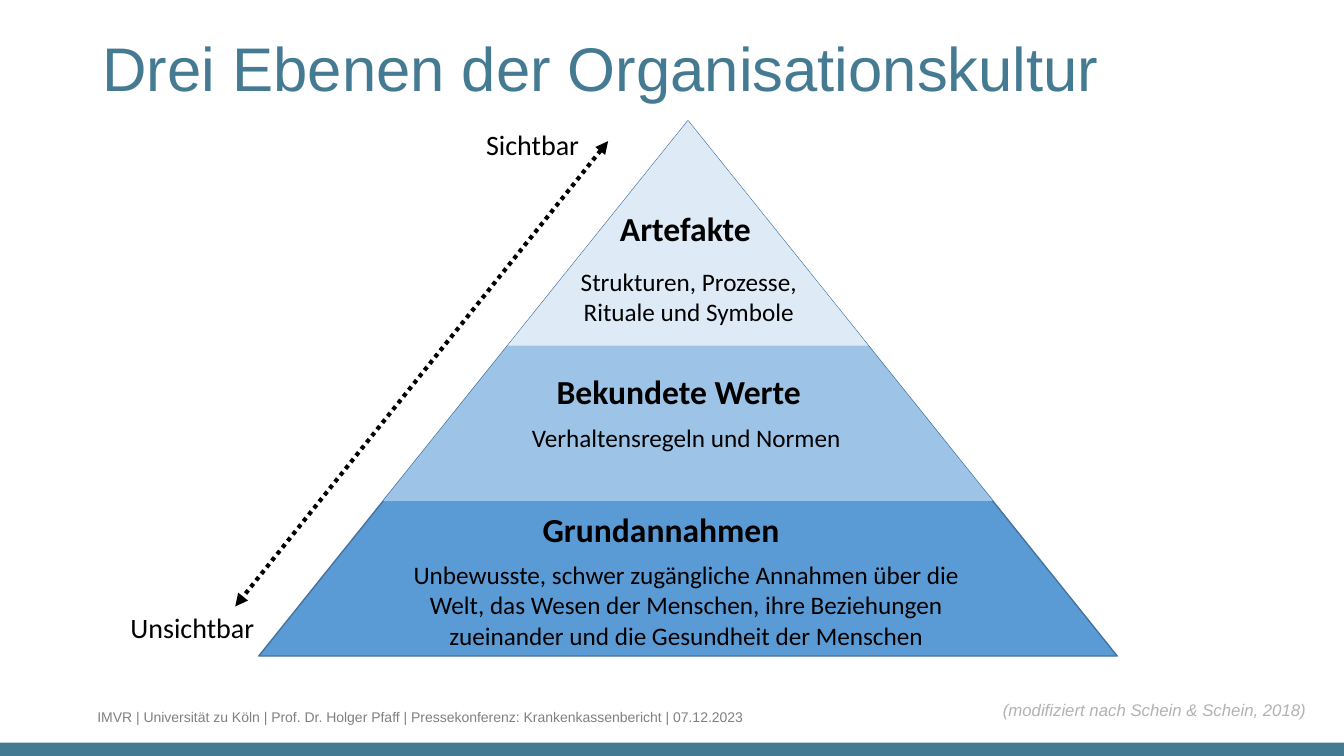
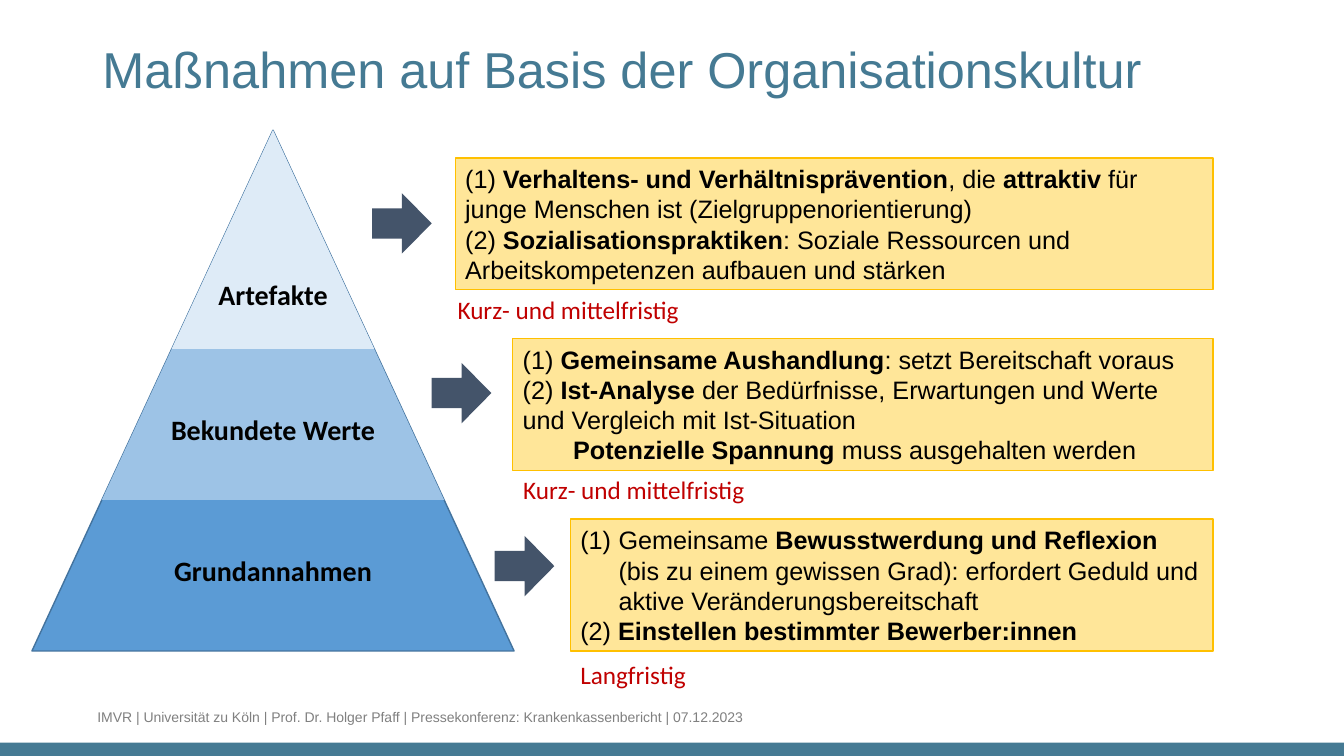
from lxml import etree
from pptx import Presentation
from pptx import util as u
from pptx.dml.color import RGBColor
from pptx.enum import dml, shapes, text
from pptx.oxml.ns import qn

COLUMNS, ROWS = 160, 90
SLIDE_WIDTH, SLIDE_HEIGHT = u.Inches(13.33), u.Inches(7.5)

PETROL = RGBColor(0x45, 0x7A, 0x93)
BLACK = RGBColor(0, 0, 0)
FOOTER_GREY = RGBColor(0x80, 0x80, 0x80)
SOURCE_GREY = RGBColor(0xB2, 0xB2, 0xB2)
LAYER_BLUES = (RGBColor(0x5B, 0x9B, 0xD5), RGBColor(0x9D, 0xC3, 0xE6),
               RGBColor(0xDE, 0xEB, 0xF7))
OUTLINE_BLUE = RGBColor(0x43, 0x73, 0x9E)
SAND = RGBColor(0xFF, 0xE6, 0x99)
AMBER = RGBColor(0xFF, 0xC0, 0x00)
SLATE = RGBColor(0x44, 0x54, 0x6A)
DARK_RED = RGBColor(0xC0, 0, 0)

LAYER_SHARES = (1, 0.71, 0.42)
LEVELS = ("Artefakte", "Bekundete Werte", "Grundannahmen")
FOOTER = ("IMVR | Universität zu Köln | Prof. Dr. Holger Pfaff | "
          "Pressekonferenz: Krankenkassenbericht | 07.12.2023")

# Level label and description: centre column, top row, width in columns
LEVEL_PLACES = ((81.6, 24.2, 36), (80.8, 43.6, 36), (78.7, 60, 36))
DESCRIPTIONS = (
    ("Strukturen, Prozesse, Rituale und Symbole", 82, 31.1, 30.1),
    ("Verhaltensregeln und Normen", 81.7, 49.7, 41.6),
    ("Unbewusste, schwer zugängliche Annahmen über die Welt, das Wesen der "
     "Menschen, ihre Beziehungen zueinander und die Gesundheit der Menschen",
     81.7, 66, 70.8),
)

# Paragraphs (** toggles bold), arrow place, time frame, time frame place
MEASURES = (
    (("(1) **Verhaltens- und Verhältnisprävention**, die **attraktiv** für\n"
      "junge Menschen ist (Zielgruppenorientierung)",
      "(2) **Sozialisationspraktiken**: Soziale Ressourcen und\n"
      "Arbeitskompetenzen aufbauen und stärken"),
     (44.3, 23), "Kurz- und mittelfristig", (53.3, 34.4)),
    (("(1) **Gemeinsame Aushandlung**: setzt Bereitschaft voraus",
      "(2) **Ist-Analyse** der Bedürfnisse, Erwartungen und Werte\n"
      "und Vergleich mit Ist-Situation",
      "**Potenzielle Spannung** muss ausgehalten werden"),
     (51.4, 43.2), "Kurz- und mittelfristig", (61.1, 55.9)),
    (("Gemeinsame **Bewusstwerdung und Reflexion** (bis zu einem gewissen "
      "Grad): erfordert Geduld und aktive Veränderungsbereitschaft",
      "(2) **Einstellen bestimmter Bewerber:innen**"),
     (58.9, 63.8), "Langfristig", (67.9, 77.9)),
)


def col(count):
    return u.Emu(round(SLIDE_WIDTH * count / COLUMNS))


def row(count):
    return u.Emu(round(SLIDE_HEIGHT * count / ROWS))


def area(left, top, width, height):
    return col(left), row(top), col(width), row(height)


def style_font(font, size, color, name="Arial", bold=False, italic=False):
    font.size, font.name = u.Pt(size), name
    font.bold, font.italic = bold, italic
    font.color.rgb = color


def add_text(slide, words, place, size, color=BLACK, align=text.PP_ALIGN.LEFT,
             **style):
    box = slide.shapes.add_textbox(*area(*place))
    frame = box.text_frame
    frame.word_wrap = True
    frame.text = words
    paragraph = frame.paragraphs[0]
    paragraph.alignment = align
    style_font(paragraph.runs[0].font, size, color, **style)
    return box


def add_centred(slide, words, centre, top, width, size, bold=False):
    add_text(slide, words, (centre - width / 2, top, width, 5), size,
             align=text.PP_ALIGN.CENTER, name="Calibri", bold=bold)


def add_filled(slide, preset, place, fill, line=None):
    shape = slide.shapes.add_shape(preset, *area(*place))
    shape.shadow.inherit = False
    shape.fill.solid()
    shape.fill.fore_color.rgb = fill
    if line is None:
        shape.line.fill.background()
    else:
        shape.line.color.rgb = line
        shape.line.width = u.Pt(1)
    return shape


def add_pyramid(slide, left, top, width, height):
    """Stack triangles that share one apex, largest at the back."""
    for share, blue in zip(LAYER_SHARES, LAYER_BLUES):
        place = (left + width * (1 - share) / 2, top, width * share, height * share)
        add_filled(slide, shapes.MSO_SHAPE.ISOSCELES_TRIANGLE, place, blue,
                   OUTLINE_BLUE if share == 1 else None)


def add_visibility_arrow(slide, start, end):
    arrow = slide.shapes.add_connector(
        shapes.MSO_CONNECTOR.STRAIGHT,
        col(start[0]), row(start[1]), col(end[0]), row(end[1]))
    arrow.line.color.rgb = BLACK
    arrow.line.width = u.Pt(3)
    arrow.line.dash_style = dml.MSO_LINE.ROUND_DOT
    outline = arrow.line._get_or_add_ln()
    for tip in ("a:headEnd", "a:tailEnd"):
        etree.SubElement(outline, qn(tip), type="triangle")
    etree.SubElement(arrow._element.spPr, qn("a:effectLst"))


def write_rich(paragraph, words):
    """Write text in which ** toggles bold and a newline breaks the line."""
    for part, chunk in enumerate(words.split("**")):
        for number, line in enumerate(chunk.split("\n")):
            if number:
                paragraph.add_line_break()
            if line:
                run = paragraph.add_run()
                run.text = line
                style_font(run.font, 18, BLACK, bold=part % 2 == 1)


def indent(paragraph, inches, numbered=False):
    properties = paragraph._p.get_or_add_pPr()
    properties.set("marL", str(u.Inches(inches)))
    if numbered:
        properties.set("indent", str(-u.Inches(inches)))
        etree.SubElement(properties, qn("a:buFont"), typeface="+mj-lt")
        etree.SubElement(properties, qn("a:buAutoNum"), type="arabicParenBoth")


def add_measure_box(slide, place, paragraphs):
    """Number an opening paragraph without "(1)"; indent a later one."""
    box = add_filled(slide, shapes.MSO_SHAPE.RECTANGLE, place, SAND, AMBER)
    frame = box.text_frame
    frame.word_wrap = True
    frame.vertical_anchor = text.MSO_ANCHOR.MIDDLE
    for number, words in enumerate(paragraphs):
        paragraph = frame.add_paragraph() if number else frame.paragraphs[0]
        paragraph.alignment = text.PP_ALIGN.LEFT
        write_rich(paragraph, words)
        if words.startswith("("):
            continue
        if number:
            indent(paragraph, 0.5)
        else:
            indent(paragraph, 0.38, numbered=True)


def add_titled_slide(deck, layout, heading, size, top):
    slide = deck.slides.add_slide(layout)
    title = slide.shapes.title
    title.left, title.top, title.width, title.height = area(11, top, 138, 17.4)
    frame = title.text_frame
    frame.text = heading
    frame.auto_size = text.MSO_AUTO_SIZE.NONE
    frame.vertical_anchor = text.MSO_ANCHOR.TOP
    paragraph = frame.paragraphs[0]
    paragraph.alignment = text.PP_ALIGN.LEFT
    paragraph.line_spacing = 0.9
    style_font(paragraph.runs[0].font, size, PETROL)
    return slide


def move_footer_to_layout(slide, layout):
    """Draw footer and band once and hand them to the shared layout."""
    for holder in list(layout.placeholders):
        if holder.placeholder_format.type != shapes.PP_PLACEHOLDER.TITLE:
            holder._element.getparent().remove(holder._element)
    footer = add_text(slide, FOOTER, (10.4, 83.8, 102.7, 3.2), 10, FOOTER_GREY)
    band = add_filled(slide, shapes.MSO_SHAPE.RECTANGLE,
                      (0, 88.4, COLUMNS, 1.6), PETROL)
    for part in (footer, band):
        layout.shapes._spTree.append(part._element)


def fill_levels_slide(slide):
    add_pyramid(slide, 30.8, 14.4, 102.2, 63.7)
    for level, place in zip(LEVELS, LEVEL_PLACES):
        add_centred(slide, level, *place, size=24, bold=True)
    for description in DESCRIPTIONS:
        add_centred(slide, *description, size=18)
    add_visibility_arrow(slide, (72.4, 16.8), (28, 72.2))
    add_centred(slide, "Sichtbar", 63.4, 14.6, 16.3, 20)
    add_centred(slide, "Unsichtbar", 22.9, 72.1, 17.5, 20)
    add_text(slide, "(modifiziert nach Schein & Schein, 2018)",
             (118.2, 82.7, 41.8, 4.7), 12, SOURCE_GREY, italic=True)


def fill_measures_slide(slide):
    add_pyramid(slide, 3.8, 15.5, 57.4, 62)
    for level, top in zip(LEVELS, (32.4, 48.5, 65.3)):
        add_centred(slide, level, 32.5, top, 29, 20, bold=True)
    right_edge = 144.4
    for step, (paragraphs, arrow, term, term_place) in enumerate(MEASURES):
        left, top = 54.2 + 6.85 * step, 18.8 + 21.5 * step
        add_measure_box(slide, (left, top, right_edge - left, 15.7), paragraphs)
        add_filled(slide, shapes.MSO_SHAPE.RIGHT_ARROW, (*arrow, 7.1, 7.2), SLATE)
        add_text(slide, term, (*term_place, 29.3, 4.8), 18, DARK_RED,
                 name="Calibri")


def main():
    deck = Presentation()
    deck.slide_width, deck.slide_height = SLIDE_WIDTH, SLIDE_HEIGHT
    layout = deck.slide_layouts.get_by_name("Title Only")
    levels = add_titled_slide(deck, layout,
                              "Drei Ebenen der Organisationskultur", 44, 4)
    measures = add_titled_slide(deck, layout,
                                "Maßnahmen auf Basis der Organisationskultur",
                                36, 4.8)
    move_footer_to_layout(levels, layout)
    fill_levels_slide(levels)
    fill_measures_slide(measures)
    deck.save("out.pptx")


if __name__ == "__main__":
    main()
